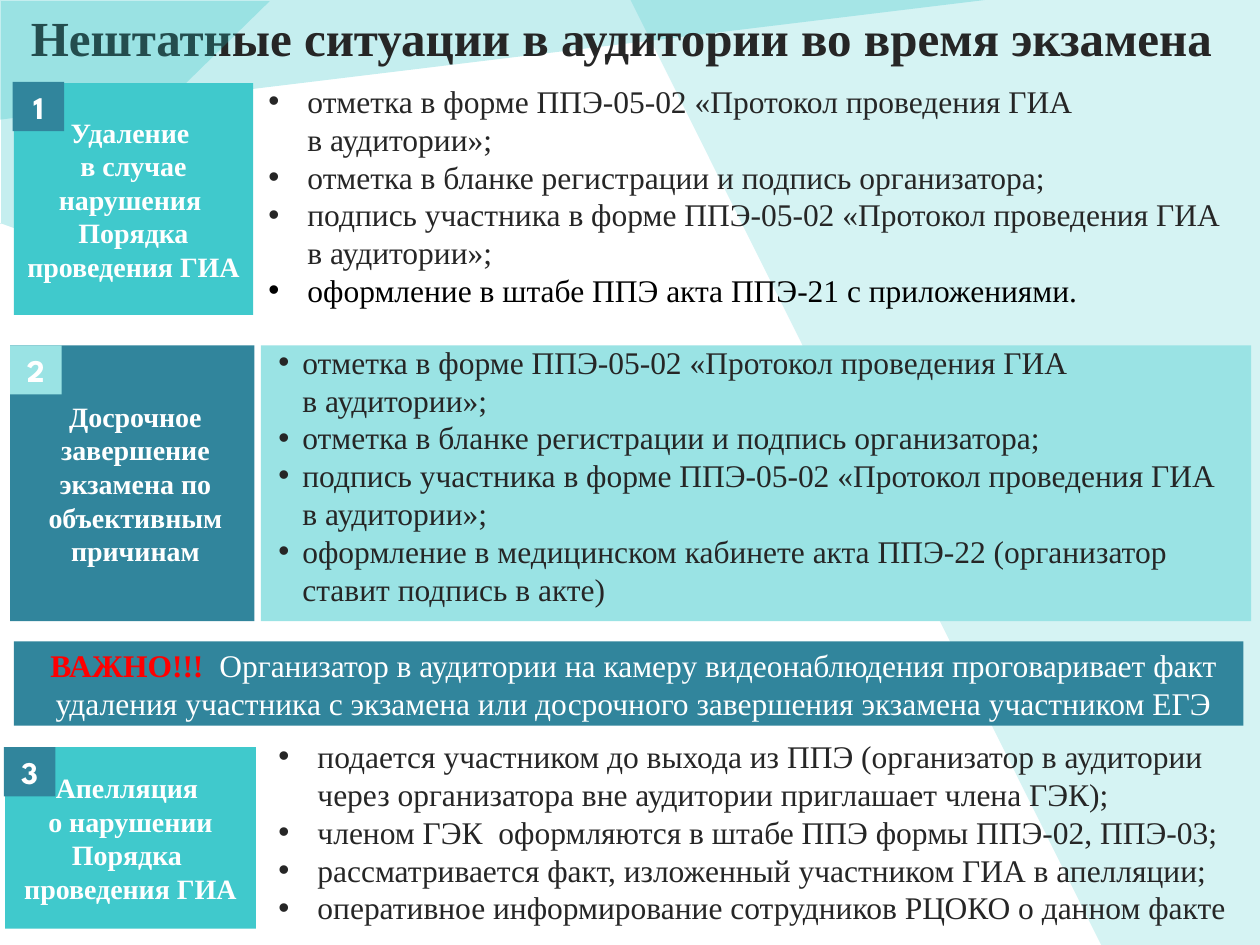
import copy

import lxml.etree
import pptx
import pptx.dml.color
import pptx.enum.shapes
import pptx.enum.text
import pptx.oxml.ns
import pptx.util

Inches = pptx.util.Inches
Pt = pptx.util.Pt
qn = pptx.oxml.ns.qn
Color = pptx.dml.color.RGBColor
Anchor = pptx.enum.text.MSO_ANCHOR
Align = pptx.enum.text.PP_ALIGN

VEIL = Color(0x20, 0xC0, 0xC4)
TURQUOISE = Color(0x40, 0xC9, 0xCC)
PALE = Color(0x9A, 0xE3, 0xE4)
TEAL = Color(0x31, 0x85, 0x9C)
DARK = Color(0x26, 0x26, 0x26)
BLACK = Color(0, 0, 0)
WHITE = Color(0xFF, 0xFF, 0xFF)
RED = Color(0xFF, 0, 0)

SERIF = "Times New Roman"
TITLE_FONT = {"name": SERIF, "size": Pt(28), "bold": True}
LABEL_FONT = {"name": SERIF, "size": Pt(16), "bold": True}
BODY_FONT = {"name": SERIF, "size": Pt(18), "bold": False}
ALERT_FONT = {**BODY_FONT, "bold": True}
NUMBER_FONT = {"name": "League Spartan", "size": Pt(18), "bold": True}

FRAME = {"word_wrap": True, "auto_size": pptx.enum.text.MSO_AUTO_SIZE.NONE}
CENTRED_FRAME = {**FRAME, "vertical_anchor": Anchor.MIDDLE}
LIST_FRAME = {**FRAME, "vertical_anchor": Anchor.TOP}
LIST_PARAGRAPH = {"alignment": Align.LEFT, "space_before": Pt(0), "space_after": Pt(0)}

BACK_VEILS = [
    ([(7.82, 0), (0, 0.95), (0, -0.01)], 26),
    ([(10.04, 7.5), (8.74, 7.5), (5, -0.01), (10.04, -0.01)], 19),
]
FRONT_VEIL = ([(0, 1.77), (0.25, 1.86), (2.14, 0.01), (0.01, 0.01), (0.01, 1.78)], 26)

PANELS = [
    ((0.11, 0.66, 1.9, 1.84), TURQUOISE,
     "Удаление \nв случае нарушения \nПорядка проведения ГИА", 0),
    ((2.07, 2.74, 7.86, 2.19), PALE, "", 0),
    ((0.08, 2.74, 1.94, 2.19), TEAL,
     "Досрочное завершение экзамена по объективным причинам", 0.05),
    ((0.04, 5.93, 1.99, 1.44), TURQUOISE,
     "Апелляция \nо нарушении Порядка \nпроведения ГИА", 0),
]
BADGES = [("1", 0.1, 0.65, TEAL), ("2", 0.08, 2.74, PALE), ("3", 0.03, 5.93, TEAL)]

COMMON_ITEMS = [
    "отметка в форме ППЭ-05-02 «Протокол проведения ГИА \nв аудитории»;",
    "отметка в бланке регистрации и подпись организатора;",
    "подпись участника в форме ППЭ-05-02 «Протокол проведения ГИА \nв аудитории»;",
]
REMOVAL_ITEMS = COMMON_ITEMS + ["оформление в штабе ППЭ акта ППЭ-21 с приложениями."]
EARLY_FINISH_ITEMS = COMMON_ITEMS + [
    "оформление в медицинском кабинете акта ППЭ-22 (организатор ставит подпись в акте)",
]
APPEAL_ITEMS = [
    "подается участником до выхода из ППЭ (организатор в аудитории через организатора "
    "вне аудитории приглашает члена ГЭК);",
    "членом ГЭК  оформляются в штабе ППЭ формы ППЭ-02, ППЭ-03;",
    "рассматривается факт, изложенный участником ГИА в апелляции;",
    "оперативное информирование сотрудников РЦОКО о данном факте",
]
LISTS = [
    ((2.03, 0.6, 7.88, 1.92), 0.31, REMOVAL_ITEMS, BLACK),
    ((2.11, 2.67, 7.77, 2.22), 0.19, EARLY_FINISH_ITEMS, DARK),
    ((2.11, 5.8, 7.77, 1.92), 0.31, APPEAL_ITEMS, DARK),
]
BANNER_TEXT = (
    "Организатор в аудитории на камеру видеонаблюдения проговаривает факт удаления "
    "участника с экзамена или досрочного завершения экзамена участником ЕГЭ"
)


def apply_format(target, values):
    for name, value in values.items():
        setattr(target, name, value)


def place(shape, box):
    names = ("left", "top", "width", "height")
    apply_format(shape, {name: Inches(length) for name, length in zip(names, box)})


def format_run(run, font, color):
    apply_format(run.font, font)
    run.font.color.rgb = color


def write_paragraph(paragraph, text, font, color):
    paragraph.text = text
    for run in paragraph.runs:
        format_run(run, font, color)
    for line_break in paragraph._p.findall(qn("a:br")):
        line_break.append(copy.deepcopy(paragraph.runs[0]._r.find(qn("a:rPr"))))


def indent_paragraph(paragraph, left, first=0):
    properties = paragraph._p.get_or_add_pPr()
    properties.set("marL", str(Inches(left)))
    properties.set("indent", str(Inches(first)))
    return properties


def paint(shape, color):
    shape.shadow.inherit = False
    shape.fill.solid()
    shape.fill.fore_color.rgb = color
    shape.line.fill.background()


def add_veil(slide, points, opacity):
    start, *others = [(Inches(x), Inches(y)) for x, y in points]
    builder = slide.shapes.build_freeform(*start, scale=1.0)
    builder.add_line_segments(others, close=True)
    veil = builder.convert_to_shape()
    paint(veil, VEIL)
    color = veil.element.find(".//" + qn("a:srgbClr"))
    lxml.etree.SubElement(color, qn("a:alpha"), val=str(opacity * 1000))
    return veil


def add_panel(slide, box, color, text="", font=LABEL_FONT, indent=0):
    rectangle = pptx.enum.shapes.MSO_SHAPE.RECTANGLE
    panel = slide.shapes.add_shape(rectangle, *map(Inches, box))
    paint(panel, color)
    apply_format(panel.text_frame, CENTRED_FRAME)
    paragraph = panel.text_frame.paragraphs[0]
    paragraph.alignment = Align.CENTER
    if indent:
        indent_paragraph(paragraph, indent)
    if text:
        write_paragraph(paragraph, text, font, WHITE)
    return paragraph


def fill_title(title):
    place(title, (0.08, -0.11, 9.8, 0.81))
    apply_format(title.text_frame, CENTRED_FRAME)
    paragraph = title.text_frame.paragraphs[0]
    paragraph.alignment = Align.CENTER
    text = "Нештатные ситуации в аудитории во время экзамена "
    write_paragraph(paragraph, text, TITLE_FONT, DARK)


def fill_list(body, box, indent, items, last_color):
    place(body, box)
    frame = body.text_frame
    apply_format(frame, LIST_FRAME)
    for index, item in enumerate(items):
        paragraph = frame.add_paragraph() if index else frame.paragraphs[0]
        apply_format(paragraph, LIST_PARAGRAPH)
        properties = indent_paragraph(paragraph, indent, -indent)
        lxml.etree.SubElement(properties, qn("a:buFont"), typeface="Arial")
        lxml.etree.SubElement(properties, qn("a:buChar"), char="•")
        color = last_color if item == items[-1] else DARK
        write_paragraph(paragraph, item, BODY_FONT, color)


def add_banner(slide):
    paragraph = add_panel(slide, (0.11, 5.09, 9.76, 0.67), TEAL, "ВАЖНО!!!  ", indent=0.08)
    format_run(paragraph.runs[0], ALERT_FONT, RED)
    run = paragraph.add_run()
    run.text = BANNER_TEXT
    format_run(run, BODY_FONT, WHITE)


def main():
    presentation = pptx.Presentation()
    presentation.slide_width, presentation.slide_height = Inches(10), Inches(7.5)
    slide = presentation.slides.add_slide(presentation.slide_layouts.get_by_name("Comparison"))
    title, *bodies = slide.placeholders
    fill_title(title)
    for points, opacity in BACK_VEILS:
        title.element.addprevious(add_veil(slide, points, opacity).element)
    add_veil(slide, *FRONT_VEIL)
    for box, color, text, indent in PANELS:
        add_panel(slide, box, color, text, indent=indent)
    for number, left, top, color in BADGES:
        add_panel(slide, (left, top, 0.41, 0.39), color, number, NUMBER_FONT)
    for body, values in zip(bodies, LISTS):
        fill_list(body, *values)
        body.element.getparent().append(body.element)
    for body in bodies[len(LISTS):]:
        body.element.getparent().remove(body.element)
    add_banner(slide)
    presentation.save("out.pptx")


if __name__ == "__main__":
    main()
